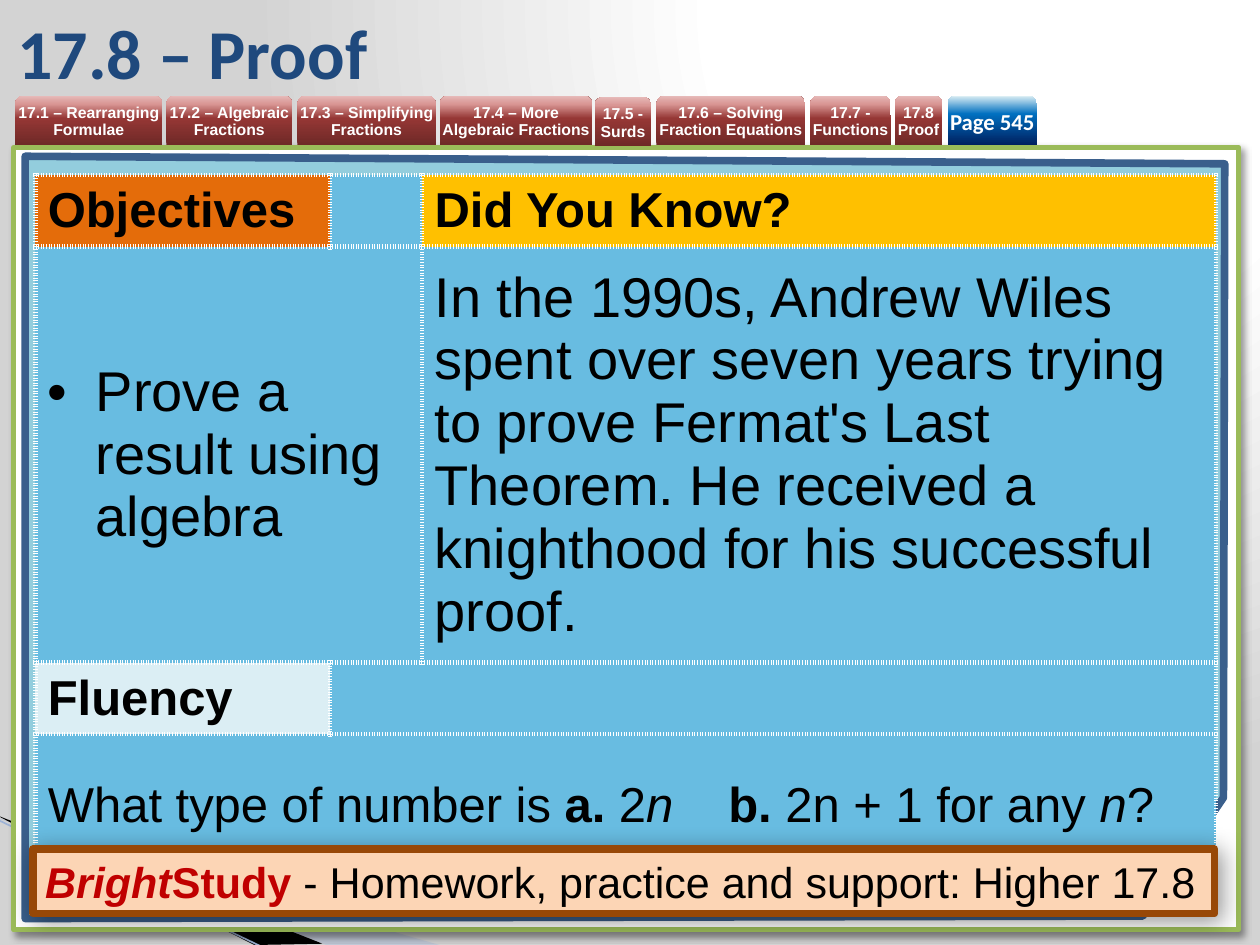
from dataclasses import dataclass
from typing import NamedTuple

from lxml.etree import SubElement as Sub
from pptx import Presentation
from pptx.dml.color import RGBColor as RGB
from pptx.enum.shapes import MSO_CONNECTOR as Wire, MSO_SHAPE as Kind
from pptx.enum.text import MSO_ANCHOR as Anchor, PP_ALIGN as Align
from pptx.oxml import parse_xml
from pptx.oxml.ns import nsdecls, qn
from pptx.util import Inches, Pt


@dataclass(frozen=True)
class Theme:
    white: str = "FFFFFF"
    black: str = "000000"
    blue: str = "A7B9DB"
    wire: str = "9EB3D6"
    green: str = "9BBB59"
    board: str = "93CDDD"
    rim: str = "3A5F8C"
    title: str = "1F497D"
    cell: str = "68BCE1"
    orange: str = "E46C0A"
    gold: str = "FFC000"
    pale: str = "DBEEF4"
    peach: str = "FCD5B5"
    brown: str = "984807"
    red: str = "C00000"
    back: tuple = ((0, "FFFFFF"), (40, "FFFFFF"), (100, "D3D3D3"))
    tab: tuple = ((0, "6F2927"), (54, "953735"), (83, "D99694"), (100, "E6B9B8"))
    page: tuple = ((0, "002060"), (63, "0070C0"), (100, "DBEEF4"))
    sans: str = "Arial"
    head: str = "Calibri"
    huge: float = 40
    large: float = 32
    mid: float = 28
    foot: float = 24.6
    badge: float = 13
    small: float = 9


T = Theme()


class Box(NamedTuple):
    x: float
    y: float
    w: float
    h: float


class Tab(NamedTuple):
    text: str
    x: float
    w: float
    y: float = 0.76


class Cell(NamedTuple):
    row: int
    col: int
    runs: tuple
    fill: str
    size: float = T.mid
    span: int = 1
    bullet: bool = False
    stop: float = 0


TABS = (
    Tab("17.1 – Rearranging Formulae", 0.12, 1.17),
    Tab("17.2 – Algebraic Fractions", 1.32, 1),
    Tab("17.3 – Simplifying Fractions", 2.36, 1.1),
    Tab("17.4 – More Algebraic Fractions", 3.49, 1.21),
    Tab("17.5 - Surds", 4.72, 0.45, 0.77),
    Tab("17.6 – Solving Fraction Equations", 5.21, 1.18),
    Tab("17.7 - Functions", 6.43, 0.64),
    Tab("17.8 Proof", 7.1, 0.38),
)
BOLD = {"bold": True}
SLANT = {"italic": True}
STORY = ("In the 1990s, Andrew Wiles spent over seven years trying to prove Fermat's "
         "Last Theorem. He received a knighthood for his successful proof.")
ASK = (("What type of number is ", {}), ("a.", BOLD), (" 2", {}), ("n\t", SLANT),
       ("b.", BOLD), (" 2n + 1 for any ", {}), ("n", SLANT), ("?", {}))
CELLS = (
    Cell(0, 0, (("Objectives", BOLD),), T.orange),
    Cell(0, 1, (), T.cell),
    Cell(0, 2, (("Did You Know?", BOLD),), T.gold),
    Cell(1, 0, (("Prove a result using algebra", {}),), T.cell, T.large, 2, True),
    Cell(1, 2, ((STORY, {}),), T.cell, T.large),
    Cell(2, 0, (("Fluency", BOLD),), T.pale),
    Cell(2, 1, (), T.cell, span=2),
    Cell(3, 0, ASK, T.cell, span=3, stop=5.4),
)


def grad(stops: tuple, aim: str):
    marks = "".join(f'<a:gs pos="{pos * 1000}"><a:srgbClr val="{hue}"/></a:gs>'
                    for pos, hue in stops)
    return parse_xml(f'<a:gradFill {nsdecls("a")} rotWithShape="1">'
                     f'<a:gsLst>{marks}</a:gsLst>{aim}</a:gradFill>')


def write(para, text: str, *, size: float, font: str = T.sans, hue: str = T.black,
          bold: bool = False, italic: bool = False) -> None:
    run = para.add_run()
    run.text = text
    face = run.font
    face.size, face.name, face.bold, face.italic = Pt(size), font, bold, italic
    face.color.rgb = RGB.from_string(hue)


def paint(shape, fill: str, line: str = "", width: float = 0) -> None:
    shape.shadow.inherit = False
    shape.fill.solid()
    shape.fill.fore_color.rgb = RGB.from_string(fill)
    if line:
        shape.line.color.rgb = RGB.from_string(line)
        shape.line.width = Pt(width)
    else:
        shape.line.fill.background()


def place(slide, kind, box: Box):
    return slide.shapes.add_shape(kind, *map(Inches, box))


def shade(shape, blur: float) -> None:
    glow = shape._element.spPr.find(qn("a:effectLst"))
    cast = Sub(glow, qn("a:outerShdw"), blurRad=str(Pt(blur)), dist=str(Pt(3)),
               dir="2700000", algn="tl", rotWithShape="0")
    Sub(Sub(cast, qn("a:srgbClr"), val=T.black), qn("a:alpha"), val="40000")


def outline(slide, points: tuple):
    spots = [(Inches(x), Inches(y)) for x, y in points]
    pen = slide.shapes.build_freeform(*spots[0])
    pen.add_line_segments(spots[1:], close=True)
    return pen.convert_to_shape()


def draw_tab(slide, tab: Tab, stops: tuple, size: float, font: str, pitch: float) -> None:
    shape = place(slide, Kind.ROUND_2_SAME_RECTANGLE, Box(tab.x, tab.y, tab.w, 0.39))
    paint(shape, stops[0][1])
    props = shape._element.spPr
    props.replace(props.find(qn("a:solidFill")),
                  grad(stops, '<a:lin ang="16200000" scaled="0"/>'))
    frame = shape.text_frame
    frame.margin_left = frame.margin_right = frame.margin_top = frame.margin_bottom = 0
    frame.word_wrap, frame.vertical_anchor = True, Anchor.MIDDLE
    para = frame.paragraphs[0]
    para.alignment = Align.CENTER
    if pitch:
        para.line_spacing = Pt(pitch)
    write(para, tab.text, size=size, font=font, hue=T.white, bold=True)


def border(cell) -> None:
    props = cell._tc.get_or_add_tcPr()
    for spot, side in enumerate(("lnL", "lnR", "lnT", "lnB")):
        props.insert(spot, parse_xml(
            f'<a:{side} {nsdecls("a")} w="{Pt(3)}"><a:solidFill><a:srgbClr val="{T.white}"/>'
            f'</a:solidFill><a:prstDash val="sysDot"/></a:{side}>'))


def draw_grid(slide) -> None:
    wide, tall = (2.34, 0.73, 6.3), (0.56, 3.09, 0.53, 1.14)
    area = Box(0.28, 1.39, sum(wide), sum(tall))
    table = slide.shapes.add_table(len(tall), len(wide), *map(Inches, area)).table
    table.first_row = table.horz_banding = False
    for col, width in zip(table.columns, wide):
        col.width = Inches(width)
    for row, height in zip(table.rows, tall):
        row.height = Inches(height)
    for item in CELLS:
        cell = table.cell(item.row, item.col)
        if item.span > 1:
            cell.merge(table.cell(item.row, item.col + item.span - 1))
        cell.vertical_anchor = Anchor.MIDDLE
        para = cell.text_frame.paragraphs[0]
        props = para._p.get_or_add_pPr()
        if item.bullet:
            props.set("marL", str(Inches(0.38)))
            props.set("indent", str(-Inches(0.38)))
            Sub(props, qn("a:buFont"), typeface=T.sans)
            Sub(props, qn("a:buChar"), char="•")
        if item.stop:
            Sub(Sub(props, qn("a:tabLst")), qn("a:tab"), pos=str(Inches(item.stop)), algn="l")
        for text, style in item.runs:
            write(para, text, size=item.size, **style)
        for col in range(item.col, item.col + item.span):
            part = table.cell(item.row, col)
            part.fill.solid()
            part.fill.fore_color.rgb = RGB.from_string(item.fill)
            border(part)


def draw_back(slide) -> None:
    slide.background.fill.solid()
    base = slide._element.cSld.find(".//" + qn("p:bgPr"))
    base.replace(base.find(qn("a:solidFill")), grad(
        T.back, '<a:path path="circle"><a:fillToRect l="65000" b="98000"/></a:path>'))
    beam = outline(slide, ((-0.01, 6.5), (3.49, 7.5), (2.59, 7.5), (-0.01, 6.49)))
    paint(beam, T.blue)
    Sub(beam._element.spPr.find(".//" + qn("a:srgbClr")), qn("a:alpha"), val="40000")
    paint(outline(slide, ((0, 6.48), (2.56, 7.49), (2.02, 7.5), (0.01, 6.49))), T.black)
    wire = slide.shapes.add_connector(Wire.STRAIGHT, *map(Inches, (-0.01, 6.51, 2.09, 7.52)))
    wire.line.color.rgb = RGB.from_string(T.wire)
    wire.line.width = Pt(0.95)
    Sub(wire._element.spPr, qn("a:effectLst"))
    card = place(slide, Kind.RECTANGLE, Box(0.11, 1.17, 9.72, 6.21))
    paint(card, T.white, T.green, 3)
    shade(card, 4)
    board = outline(slide, ((0.2, 1.24), (9.72, 1.3), (9.71, 6.33), (9.07, 7.27), (0.2, 7.29)))
    paint(board, T.board, T.rim, 4.33)


def main() -> None:
    deck = Presentation()
    deck.slide_width, deck.slide_height = Inches(10), Inches(7.5)
    slide = deck.slides.add_slide(deck.slide_layouts[6])
    draw_back(slide)
    for tab in TABS:
        draw_tab(slide, tab, T.tab, T.small, T.sans, 10)
    title = slide.shapes.add_textbox(*map(Inches, Box(0.04, 0.05, 8.27, 0.71))).text_frame
    title.word_wrap, title.vertical_anchor = True, Anchor.MIDDLE
    write(title.paragraphs[0], "17.8 – Proof", size=T.huge, font=T.head, hue=T.title, bold=True)
    draw_tab(slide, Tab("Page 545", 7.52, 0.71), T.page, T.badge, T.head, 0)
    draw_grid(slide)
    strip = place(slide, Kind.RECTANGLE, Box(0.26, 6.74, 9.38, 0.51))
    paint(strip, T.peach, T.brown, 4.33)
    shade(strip, 13)
    strip.text_frame.word_wrap = True
    strip.text_frame.vertical_anchor = Anchor.MIDDLE
    para = strip.text_frame.paragraphs[0]
    para.alignment = Align.LEFT
    write(para, "Bright", size=T.foot, hue=T.red, bold=True, italic=True)
    write(para, "Study ", size=T.foot, hue=T.red, bold=True)
    write(para, "- Homework, practice and support: Higher 17.8", size=T.foot)
    deck.save("out.pptx")


if __name__ == "__main__":
    main()
